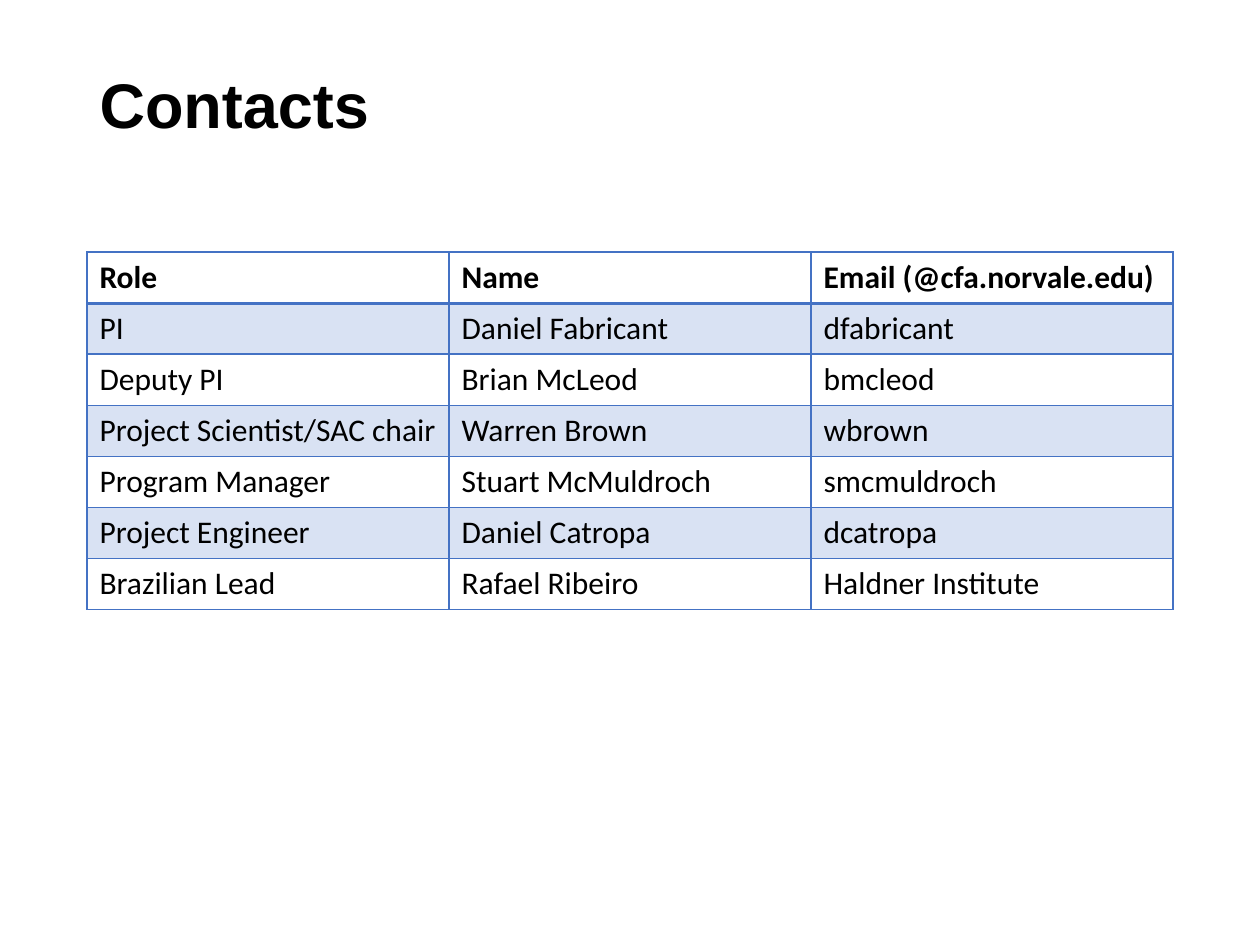
from typing import NamedTuple

from lxml import etree
from pptx import Presentation
from pptx import util as u
from pptx.dml.color import RGBColor
from pptx.enum import text
from pptx.oxml.ns import qn

COLORS = {"text": "000000", "accent": "4472C4"}
BAND_ALPHA = 20
LEFT, WIDTH = 0.69, 8.62
TABLE_TOP, TABLE_HEIGHT = 2, 2.84
TITLE_FONT = {"name": "Arial", "size": u.Pt(36), "bold": True}
HEADER_FONT = {"name": "Calibri", "size": u.Pt(18), "bold": True}
BODY_FONT = {**HEADER_FONT, "bold": False}


class Contact(NamedTuple):
    role: str
    name: str
    email: str


HEADER = Contact("Role", "Name", "Email (@cfa.norvale.edu)")
CONTACTS = [
    Contact("PI", "Daniel Fabricant", "dfabricant"),
    Contact("Deputy PI", "Brian McLeod", "bmcleod"),
    Contact("Project Scientist/SAC chair", "Warren Brown", "wbrown"),
    Contact("Program Manager", "Stuart McMuldroch", "smcmuldroch"),
    Contact("Project Engineer", "Daniel Catropa", "dcatropa"),
    Contact("Brazilian Lead", "Rafael Ribeiro", "Haldner Institute"),
]


def write(tf, content: str, font: dict) -> None:
    p = tf.paragraphs[0]
    p.alignment = text.PP_ALIGN.LEFT
    r = p.add_run()
    r.text = content
    for key, value in font.items():
        setattr(r.font, key, value)
    r.font.color.rgb = RGBColor.from_string(COLORS["text"])


def add_solid_fill(parent, color: str):
    fill = etree.SubElement(parent, qn("a:solidFill"))
    return etree.SubElement(fill, qn("a:srgbClr"), val=color)


def style_cell(cell, widths: dict, banded: bool) -> None:
    """Set the borders, with widths in points by side, and the fill."""
    tc_pr = cell._tc.get_or_add_tcPr()
    for side in "LRTB":
        line = etree.SubElement(tc_pr, qn(f"a:ln{side}"), w=str(u.Pt(widths.get(side, 1))))
        add_solid_fill(line, COLORS["accent"])
    if banded:
        color = add_solid_fill(tc_pr, COLORS["accent"])
        etree.SubElement(color, qn("a:alpha"), val=str(BAND_ALPHA * 1000))
    else:
        cell.fill.background()


def add_title(slide, content: str) -> None:
    sp = slide.shapes.title
    sp.left, sp.top = u.Inches(LEFT), u.Inches(0.4)
    sp.width, sp.height = u.Inches(WIDTH), u.Inches(0.92)
    tf = sp.text_frame
    tf.vertical_anchor = text.MSO_ANCHOR.MIDDLE
    tf.paragraphs[0].line_spacing = 0.9
    write(tf, content, TITLE_FONT)


def add_contact_table(slide, contacts: list[Contact]) -> None:
    rows = [HEADER, *contacts]
    table = slide.shapes.add_table(
        len(rows), len(HEADER), u.Inches(LEFT), u.Inches(TABLE_TOP),
        u.Inches(WIDTH), u.Inches(TABLE_HEIGHT),
    ).table
    for i, row in enumerate(rows):
        widths = {0: {"B": 2}, 1: {"T": 2}}.get(i, {})
        for j, content in enumerate(row):
            cell = table.cell(i, j)
            style_cell(cell, widths, banded=i % 2 == 1)
            write(cell.text_frame, content, BODY_FONT if i else HEADER_FONT)


def main() -> None:
    prs = Presentation()
    prs.slide_width, prs.slide_height = u.Inches(10), u.Inches(7.5)
    slide = prs.slides.add_slide(prs.slide_layouts[5])
    add_title(slide, "Contacts")
    add_contact_table(slide, CONTACTS)
    prs.save("out.pptx")


if __name__ == "__main__":
    main()
